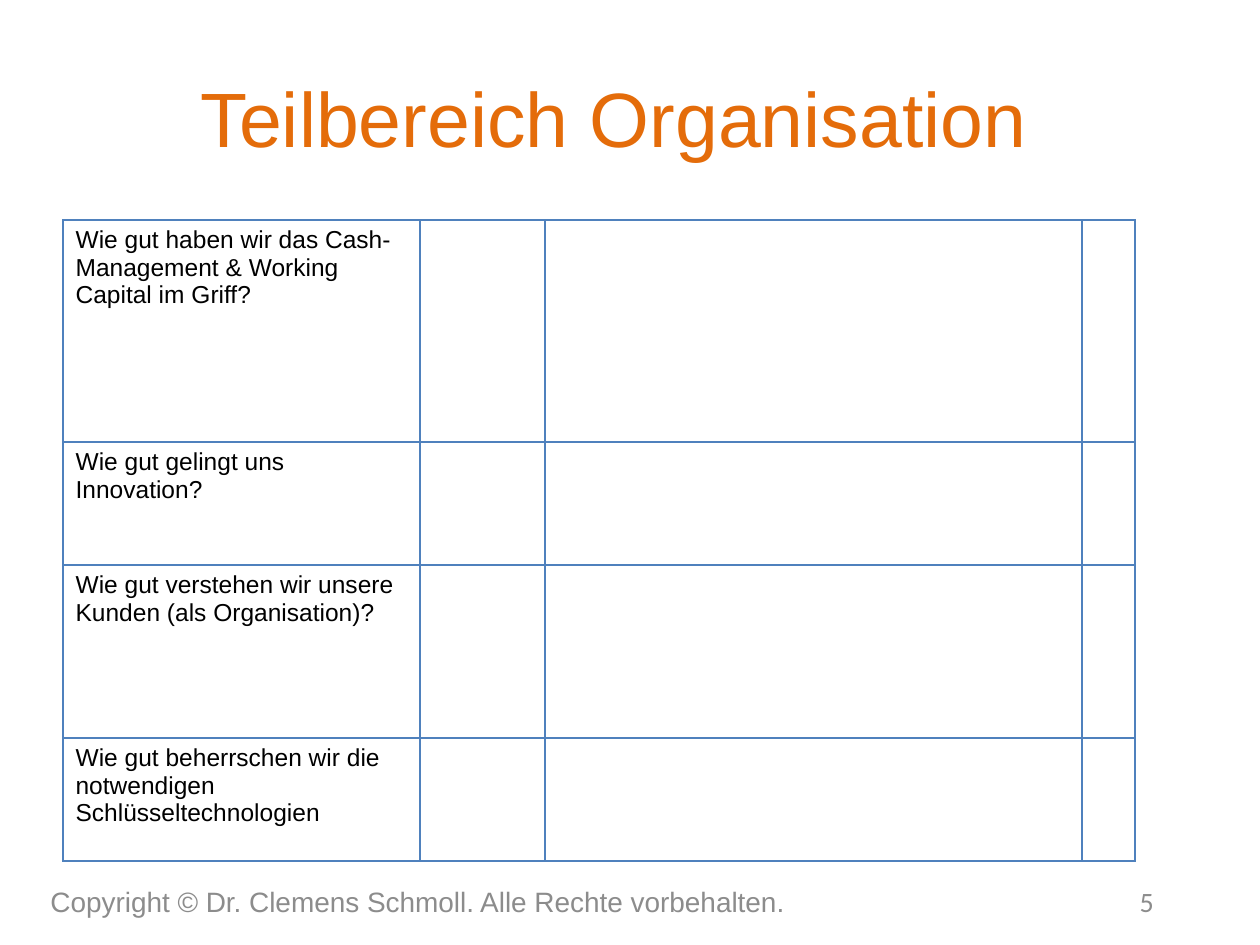
"""Build the slide "Teilbereich Organisation" with its question table."""
import pptx
import pptx.dml.color
import pptx.enum.text
import pptx.oxml
import pptx.oxml.ns
import pptx.util
from pptx.enum.text import MSO_ANCHOR, PP_ALIGN

RGBColor = pptx.dml.color.RGBColor
ORANGE = RGBColor(0xE4, 0x6C, 0x0A)
GRAY = RGBColor(0x8C, 0x8C, 0x8C)
BLACK = RGBColor(0, 0, 0)
BLUE = RGBColor(0x4F, 0x81, 0xBD)

TITLE = "Teilbereich Organisation"
QUESTIONS = [
    ("Wie gut haben wir das Cash-Management & Working Capital im Griff?", 222),
    ("Wie gut gelingt uns Innovation?", 123),
    ("Wie gut verstehen wir unsere Kunden (als Organisation)?", 173),
    ("Wie gut beherrschen wir die notwendigen Schlüsseltechnologien", 123),
]
COLUMN_WIDTHS = [357, 125, 537, 53]
COPYRIGHT = "Copyright © Dr. Clemens Schmoll. Alle Rechte vorbehalten."
PAGE_NUMBER = "5"


def px(length):
    return pptx.util.Emu(round(length * 914400 / 126))


def write(frame, text, size, color, font="Arial", align=PP_ALIGN.LEFT):
    frame.word_wrap = True
    paragraph = frame.paragraphs[0]
    paragraph.alignment = align
    run = paragraph.add_run()
    run.text = text
    run.font.size = pptx.util.Pt(size)
    run.font.name = font
    run.font.color.rgb = color


def add_text(slide, box, text, **style):
    frame = slide.shapes.add_textbox(*map(px, box)).text_frame
    frame.vertical_anchor = MSO_ANCHOR.MIDDLE
    write(frame, text, **style)


def set_borders(cell):
    properties = cell._tc.get_or_add_tcPr()
    for position, side in enumerate(("lnL", "lnR", "lnT", "lnB")):
        border = pptx.oxml.parse_xml(
            f'<a:{side} {pptx.oxml.ns.nsdecls("a")} w="{pptx.util.Pt(1)}">'
            f'<a:solidFill><a:srgbClr val="{BLUE}"/></a:solidFill></a:{side}>'
        )
        properties.insert(position, border)


def add_questions(slide, left, top):
    width = sum(COLUMN_WIDTHS)
    height = sum(row_height for _, row_height in QUESTIONS)
    table = slide.shapes.add_table(
        len(QUESTIONS), len(COLUMN_WIDTHS), *map(px, (left, top, width, height))
    ).table
    table.first_row = False
    table.horz_banding = False
    for column, column_width in zip(table.columns, COLUMN_WIDTHS):
        column.width = px(column_width)
    for row, (question, row_height) in zip(table.rows, QUESTIONS):
        row.height = px(row_height)
        write(row.cells[0].text_frame, question, size=14, color=BLACK)
        for cell in row.cells:
            cell.fill.background()
            set_borders(cell)


def main():
    presentation = pptx.Presentation()
    presentation.slide_width = px(1260)
    presentation.slide_height = px(945)
    slide = presentation.slides.add_slide(presentation.slide_layouts[6])
    add_text(slide, (63, 38, 1102, 158), TITLE,
             size=44, color=ORANGE, align=PP_ALIGN.CENTER)
    add_text(slide, (872, 876, 294, 50), PAGE_NUMBER,
             size=16, color=GRAY, font="Calibri", align=PP_ALIGN.RIGHT)
    add_questions(slide, 63, 220)
    add_text(slide, (38, 876, 801, 50), COPYRIGHT, size=16, color=GRAY)
    presentation.save("out.pptx")


if __name__ == "__main__":
    main()
